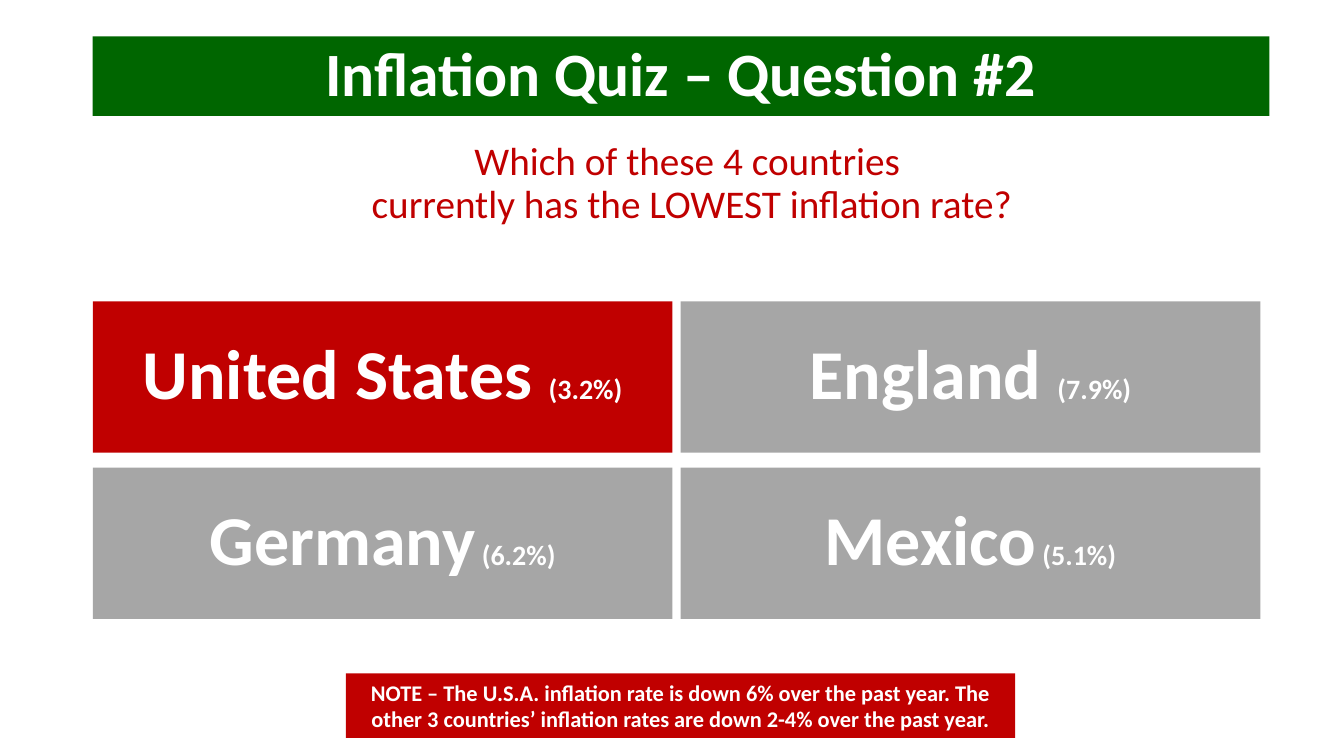
from dataclasses import dataclass

from pptx import Presentation
from pptx.dml.color import RGBColor
from pptx.enum.shapes import MSO_SHAPE
from pptx.enum.text import MSO_ANCHOR, PP_ALIGN
from pptx.slide import Slide
from pptx.text.text import TextFrame
from pptx.util import Inches, Pt

RECT = MSO_SHAPE.RECTANGLE
CENTER = PP_ALIGN.CENTER
TOP = MSO_ANCHOR.TOP
MIDDLE = MSO_ANCHOR.MIDDLE


@dataclass(frozen=True)
class Theme:
    font: str = "Calibri"
    green: str = "006600"
    red: str = "C00000"
    gray: str = "A6A6A6"
    white: str = "FFFFFF"
    title: int = 44
    ask: int = 28
    name: int = 50
    rate: int = 20
    note: int = 16


@dataclass(frozen=True)
class Box:
    left: float
    top: float
    width: float
    height: float

    def place(self) -> list[int]:
        return [Inches(v) for v in (self.left, self.top, self.width, self.height)]


@dataclass(frozen=True)
class Answer:
    name: str
    rate: str
    right: bool = False


THEME = Theme()
LEFT = 0.92
CARD = Box(LEFT, 2.99, 5.75, 1.5)
STEP_X, STEP_Y = 5.83, 1.65
COLS = 2
ANSWERS = [
    Answer("United States ", "(3.2%)", True),
    Answer("England ", "(7.9%)"),
    Answer("Germany", " (6.2%)"),
    Answer("Mexico", " (5.1%)"),
]


def write(frame: TextFrame, text: str, *, size: int, color: str = THEME.white,
          bold: bool = True, line: float = 0.9, anchor: MSO_ANCHOR = MIDDLE) -> None:
    """Append a formatted run to the first paragraph of the frame."""
    frame.word_wrap = True
    frame.vertical_anchor = anchor
    para = frame.paragraphs[0]
    para.alignment = CENTER
    para.line_spacing = line
    for i, part in enumerate(text.split("\n")):
        if i:
            para.add_line_break()
        run = para.add_run()
        run.text = part
        font = run.font
        font.name = THEME.font
        font.size = Pt(size)
        font.bold = bold
        font.color.rgb = RGBColor.from_string(color)


def panel(slide: Slide, box: Box, fill: str) -> TextFrame:
    """Draw a filled rectangle without outline and return its text frame."""
    shape = slide.shapes.add_shape(RECT, *box.place())
    shape.shadow.inherit = False
    shape.fill.solid()
    shape.fill.fore_color.rgb = RGBColor.from_string(fill)
    shape.line.fill.background()
    return shape.text_frame


def main() -> None:
    deck = Presentation()
    deck.slide_width = Inches(13.33)
    deck.slide_height = Inches(7.5)
    slide = deck.slides.add_slide(deck.slide_layouts[6])

    ask = slide.shapes.add_textbox(*Box(LEFT, 1.36, 11.88, 5.4).place())
    write(ask.text_frame,
          "Which of these 4 countries \ncurrently has the LOWEST inflation rate?",
          size=THEME.ask, color=THEME.red, bold=False, anchor=TOP)

    for i, item in enumerate(ANSWERS):
        row, col = divmod(i, COLS)
        box = Box(CARD.left + col * STEP_X, CARD.top + row * STEP_Y,
                  CARD.width, CARD.height)
        frame = panel(slide, box, THEME.red if item.right else THEME.gray)
        write(frame, item.name, size=THEME.name)
        write(frame, item.rate, size=THEME.rate)

    title = panel(slide, Box(LEFT, 0.36, 11.67, 0.79), THEME.green)
    write(title, "Inflation Quiz – Question #2", size=THEME.title)

    note = panel(slide, Box(3.43, 6.68, 6.64, 0.64), THEME.red)
    write(note, "NOTE – The U.S.A. inflation rate is down 6% over the past year. "
          "The other 3 countries’ inflation rates are down 2-4% over the past year.",
          size=THEME.note, line=1.0)

    deck.save("out.pptx")


if __name__ == "__main__":
    main()
